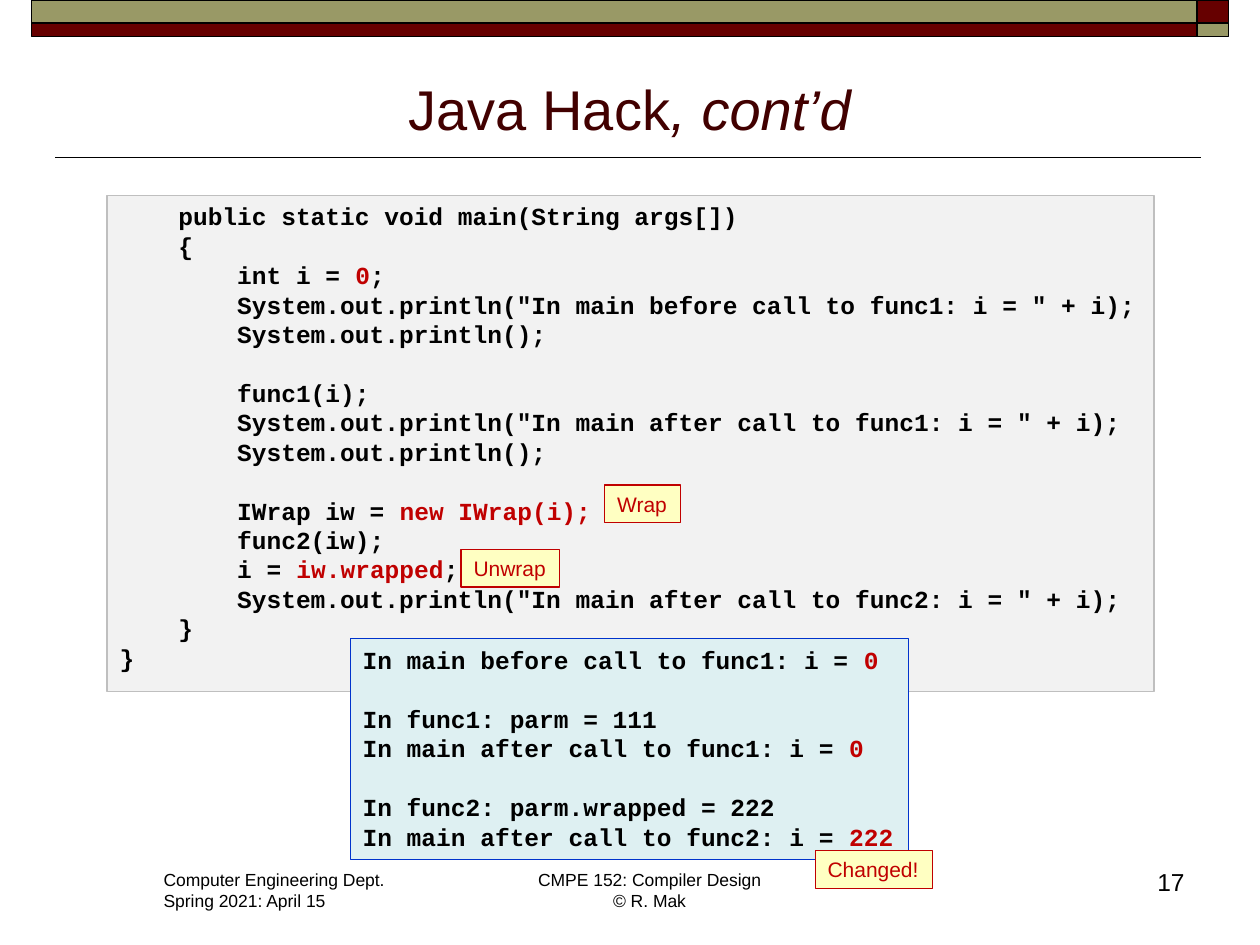
from pptx import Presentation
from pptx import util as u
from pptx.dml.color import RGBColor
from pptx.enum import shapes, text
from pptx.oxml import parse_xml
from pptx.oxml.ns import nsdecls

Inches = u.Inches

BLACK = RGBColor(0x00, 0x00, 0x00)
MAROON = RGBColor(0x66, 0x00, 0x00)
OLIVE = RGBColor(0x99, 0x99, 0x66)
TITLE_COLOR = RGBColor(0x42, 0x00, 0x00)
RED = RGBColor(0xC0, 0x00, 0x00)
CODE_FILL = RGBColor(0xF2, 0xF2, 0xF2)
CODE_LINE = RGBColor(0xBF, 0xBF, 0xBF)
OUTPUT_FILL = RGBColor(0xDE, 0xF0, 0xF2)
OUTPUT_LINE = RGBColor(0x00, 0x33, 0xCC)
LABEL_FILL = RGBColor(0xFF, 0xFF, 0xC2)

# Text between bars is highlighted
CODE = """\
    public static void main(String args[])
    {
        int i = |0|;
        System.out.println("In main before call to func1: i = " + i);
        System.out.println();

        func1(i);
        System.out.println("In main after call to func1: i = " + i);
        System.out.println();

        IWrap iw = |new IWrap(i);|
        func2(iw);
        i = |iw.wrapped|;
        System.out.println("In main after call to func2: i = " + i);
    }
}"""
OUTPUT = """\
In main before call to func1: i = |0|

In func1: parm = 111
In main after call to func1: i = |0|

In func2: parm.wrapped = 222
In main after call to func2: i = |222|"""


def add_rectangle(slide, box, fill, line, width):
    shape = slide.shapes.add_shape(shapes.MSO_SHAPE.RECTANGLE, *map(Inches, box))
    shape.shadow.inherit = False
    shape.fill.solid()
    shape.fill.fore_color.rgb = fill
    shape.line.color.rgb = line
    shape.line.width = u.Pt(width)
    return shape


def style_font(font, name, size, color):
    font.name = name
    font.size = u.Pt(size)
    font.color.rgb = color


def fill_text(shape, lines, size, color=BLACK, align=text.PP_ALIGN.LEFT, wrap=False):
    frame = shape.text_frame
    frame.word_wrap = wrap
    frame.vertical_anchor = text.MSO_ANCHOR.TOP
    frame.text = lines
    for paragraph in frame.paragraphs:
        paragraph.alignment = align
        style_font(paragraph.font, "Arial", size, color)
        for run in paragraph.runs:
            style_font(run.font, "Arial", size, color)
    return frame


def add_text(slide, box, lines, size, **options):
    return fill_text(slide.shapes.add_textbox(*map(Inches, box)), lines, size, **options)


def add_banner(slide, left, top, width, height):
    """Two-tone bars with swapped colours in the right corner."""
    corner, upper = 0.25, 0.18
    bar, lower = width - corner, height - upper
    for x, y, w, h, fill in (
        (left + bar, top, corner, upper, MAROON),
        (left, top, bar, upper, OLIVE),
        (left, top + upper, bar, lower, MAROON),
        (left + bar, top + upper, corner, lower, OLIVE),
    ):
        add_rectangle(slide, (x, y, w, h), fill, BLACK, 1)


def add_title(slide, left, top, width, height):
    frame = add_text(slide, (left, top, width, height), "Java Hack", 32,
                     color=TITLE_COLOR, align=text.PP_ALIGN.CENTER, wrap=True)
    frame.vertical_anchor = text.MSO_ANCHOR.BOTTOM
    run = frame.paragraphs[0].add_run()
    run.text = ", cont’d"
    style_font(run.font, "Arial", 32, TITLE_COLOR)
    run.font.italic = True

    # Rule below the title
    y = Inches(top + height + 0.08)
    rule = slide.shapes.add_connector(shapes.MSO_CONNECTOR.STRAIGHT,
                                      Inches(left - 0.06), y,
                                      Inches(left + width + 0.03), y)
    rule.line.color.rgb = BLACK
    rule.line.width = u.Pt(1)
    rule._element.spPr.append(parse_xml(f"<a:effectLst {nsdecls('a')}/>"))


def add_listing(slide, box, source, fill, line):
    """Monospaced panel; every second part of a line is red."""
    panel = add_rectangle(slide, box, fill, line, 0.75)
    frame = panel.text_frame
    frame.word_wrap = False
    frame.vertical_anchor = text.MSO_ANCHOR.TOP
    for index, source_line in enumerate(source.split("\n")):
        paragraph = frame.add_paragraph() if index else frame.paragraphs[0]
        paragraph.alignment = text.PP_ALIGN.LEFT
        style_font(paragraph.font, "Courier New", 14, BLACK)
        for part, words in enumerate(source_line.split("|")):
            if words:
                run = paragraph.add_run()
                run.text = words
                style_font(run.font, "Courier New", 14, RED if part % 2 else BLACK)
                run.font.bold = True


def add_label(slide, left, top, width, words):
    label = add_rectangle(slide, (left, top, width, 0.3), LABEL_FILL, RED, 0.75)
    fill_text(label, words, 12, color=RED)


def add_footer(slide, left, top, width, height):
    add_text(slide, (left, top, 1.97, height),
             "Computer Engineering Dept.\nSpring 2021: April 15", 10)
    add_text(slide, (left + 2.96, top, 1.99, height),
             "CMPE 152: Compiler Design\v© R. Mak", 10, align=text.PP_ALIGN.CENTER)
    add_text(slide, (left + width - 0.7, top - 0.02, 0.7, 0.5), "17", 14,
             align=text.PP_ALIGN.RIGHT, wrap=True)


def main():
    presentation = Presentation()
    presentation.slide_width = Inches(10)
    presentation.slide_height = Inches(7.5)
    slide = presentation.slides.add_slide(presentation.slide_layouts[6])

    add_banner(slide, 0.25, 0, 9.5, 0.29)
    add_footer(slide, 1.2, 6.85, 8.3, 0.44)
    add_title(slide, 0.5, 0.45, 9, 0.72)
    add_listing(slide, (0.85, 1.55, 8.31, 3.94), CODE, CODE_FILL, CODE_LINE)
    add_listing(slide, (2.78, 5.07, 4.43, 1.75), OUTPUT, OUTPUT_FILL, OUTPUT_LINE)

    # Callouts beside the highlighted code
    for left, top, width, words in (
        (6.47, 6.75, 0.93, "Changed!"),
        (4.8, 3.85, 0.6, "Wrap"),
        (3.66, 4.36, 0.78, "Unwrap"),
    ):
        add_label(slide, left, top, width, words)

    presentation.save("out.pptx")


if __name__ == "__main__":
    main()
